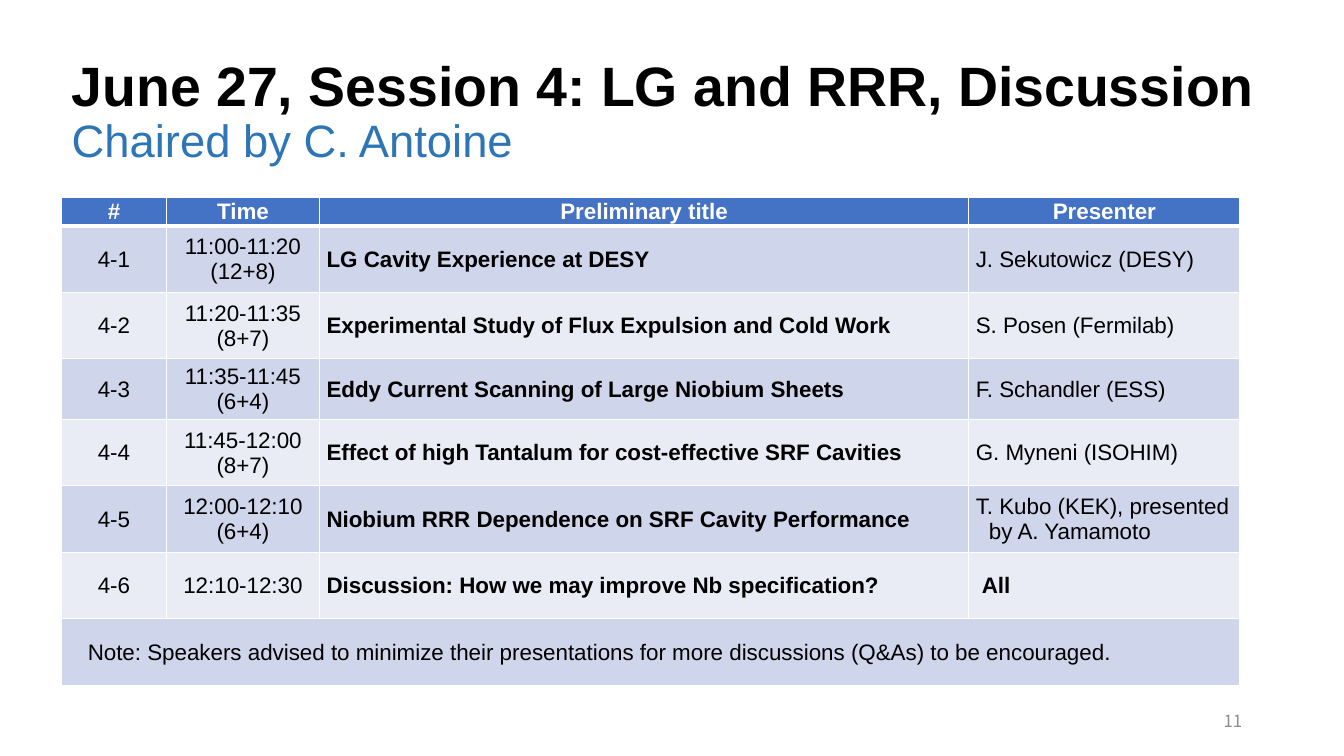
from dataclasses import dataclass
from lxml.etree import SubElement
from pptx import Presentation
from pptx.dml.color import RGBColor
from pptx.enum.text import MSO_ANCHOR, MSO_AUTO_SIZE, PP_ALIGN
from pptx.oxml.ns import qn
from pptx.util import Inches, Pt


@dataclass(frozen=True)
class Theme:
    font: str = "Arial"
    number_font: str = "Noto Sans CJK JP"
    ink: str = "000000"
    paper: str = "FFFFFF"
    accent: str = "2E75B6"
    header: str = "4472C4"
    bands: tuple = ("CFD5EA", "E9EBF5")
    muted: str = "8C8C8C"
    title_size: float = 39.6
    chair_size: float = 32.4
    body_size: float = 16
    number_size: float = 12


THEME = Theme()
WIDTH, HEIGHT = Inches(13.33), Inches(7.5)
LEFT = 4.58  # shared left edge, percent of the slide's width
COLUMNS = (7.8, 11.4, 48.31, 20.18)
ROWS = (3.73, 8.8, 8.8, 8, 8.8, 8.8, 8.8, 8.8)
HEADINGS = ("#", "Time", "Preliminary title", "Presenter")
TALKS = (
    ("4-1", "11:00-11:20\n(12+8)", "LG Cavity Experience at DESY", "J. Sekutowicz (DESY)"),
    ("4-2", "11:20-11:35 (8+7)", "Experimental Study of Flux Expulsion and Cold Work", "S. Posen (Fermilab)"),
    ("4-3", "11:35-11:45\n(6+4)", "Eddy Current Scanning of Large Niobium Sheets", "F. Schandler (ESS)"),
    ("4-4", "11:45-12:00\n(8+7)", "Effect of high Tantalum for cost-effective SRF Cavities", "G. Myneni (ISOHIM)"),
    ("4-5", "12:00-12:10\n(6+4)", "Niobium RRR Dependence on SRF Cavity Performance",
     "T. Kubo (KEK), presented\nby A. Yamamoto"),
    ("4-6", "12:10-12:30", "Discussion: How we may improve Nb specification?", "All"),
)
NOTE = ("Note: Speakers advised to minimize their presentations for more "
        "discussions (Q&As) to be encouraged.")


def across(percent):
    return round(WIDTH * percent / 100)


def down(percent):
    return round(HEIGHT * percent / 100)


def style(span, size, color, bold=False, font=THEME.font):
    span.font.name = font
    span.font.size = Pt(size)
    span.font.bold = bold
    span.font.color.rgb = RGBColor.from_string(color)


def indent(para, inches):
    para._p.get_or_add_pPr().set("marL", str(Inches(inches)))


def add_borders(cell, bottom):
    properties = cell._tc.get_or_add_tcPr()
    # Borders come before the fill, so this runs on a cell without one
    for side, width in (("L", 1), ("R", 1), ("T", 1), ("B", bottom)):
        line = SubElement(properties, qn(f"a:ln{side}"), w=str(Pt(width)))
        fill = SubElement(line, qn("a:solidFill"))
        SubElement(fill, qn("a:srgbClr"), val=THEME.paper)


def fill_cell(cell, text, fill, color=THEME.ink, bold=False, centred=False,
              inset=0.06, bottom=1):
    add_borders(cell, bottom)
    cell.fill.solid()
    cell.fill.fore_color.rgb = RGBColor.from_string(fill)
    cell.margin_left = cell.margin_right = cell.margin_top = Inches(0.01)
    cell.margin_bottom = 0
    cell.vertical_anchor = MSO_ANCHOR.MIDDLE
    cell.text_frame.text = text
    for para in cell.text_frame.paragraphs:
        para.alignment = PP_ALIGN.CENTER if centred else PP_ALIGN.LEFT
        if not centred:
            indent(para, inset)
        for span in para.runs:
            style(span, THEME.body_size, color, bold)


def add_title(page, headline, chair):
    title = page.shapes.title
    title.left, title.top = across(LEFT), down(6.53)
    title.width, title.height = across(91.75), down(16.93)
    frame = title.text_frame
    frame.text = f"{headline}\v{chair}"
    frame.word_wrap = True
    frame.auto_size = MSO_AUTO_SIZE.NONE
    frame.vertical_anchor = MSO_ANCHOR.MIDDLE
    para = frame.paragraphs[0]
    para.alignment = PP_ALIGN.LEFT
    para.line_spacing = 0.9
    style(para.runs[0], THEME.title_size, THEME.ink, bold=True)
    style(para.runs[1], THEME.chair_size, THEME.accent)


def add_programme(page):
    table = page.shapes.add_table(
        len(ROWS), len(COLUMNS), across(LEFT), down(26.13),
        across(sum(COLUMNS)), down(sum(ROWS))).table
    for column, share in zip(table.columns, COLUMNS):
        column.width = across(share)
    for row, share in zip(table.rows, ROWS):
        row.height = down(share)

    # Header row
    for index, heading in enumerate(HEADINGS):
        fill_cell(table.cell(0, index), heading, THEME.header, THEME.paper,
                  bold=True, centred=True, bottom=3)

    # Talks in alternating bands
    for number, talk in enumerate(TALKS):
        for index, text in enumerate(talk):
            fill_cell(table.cell(number + 1, index), text, THEME.bands[number % 2],
                      bold=index == 2 or text == "All", centred=index < 2,
                      inset=0.12 if text == "All" else 0.06)
    indent(table.cell(5, 3).text_frame.paragraphs[1], 0.19)

    # Note across the whole last row
    last = len(ROWS) - 1
    note = table.cell(last, 0)
    note.merge(table.cell(last, len(COLUMNS) - 1))
    fill_cell(note, NOTE, THEME.bands[0], inset=0.25)


def add_page_number(page, number):
    box = page.shapes.add_textbox(across(70.67), down(92.67), across(22.5), down(5.33))
    frame = box.text_frame
    frame.word_wrap = True
    frame.vertical_anchor = MSO_ANCHOR.MIDDLE
    frame.text = number
    para = frame.paragraphs[0]
    para.alignment = PP_ALIGN.RIGHT
    style(para.runs[0], THEME.number_size, THEME.muted, font=THEME.number_font)


def main():
    deck = Presentation()
    deck.slide_width, deck.slide_height = WIDTH, HEIGHT
    page = deck.slides.add_slide(deck.slide_layouts[5])
    add_title(page, "June 27, Session 4: LG and RRR, Discussion", "Chaired by C. Antoine")
    add_programme(page)
    add_page_number(page, "11")
    deck.save("out.pptx")


if __name__ == "__main__":
    main()
